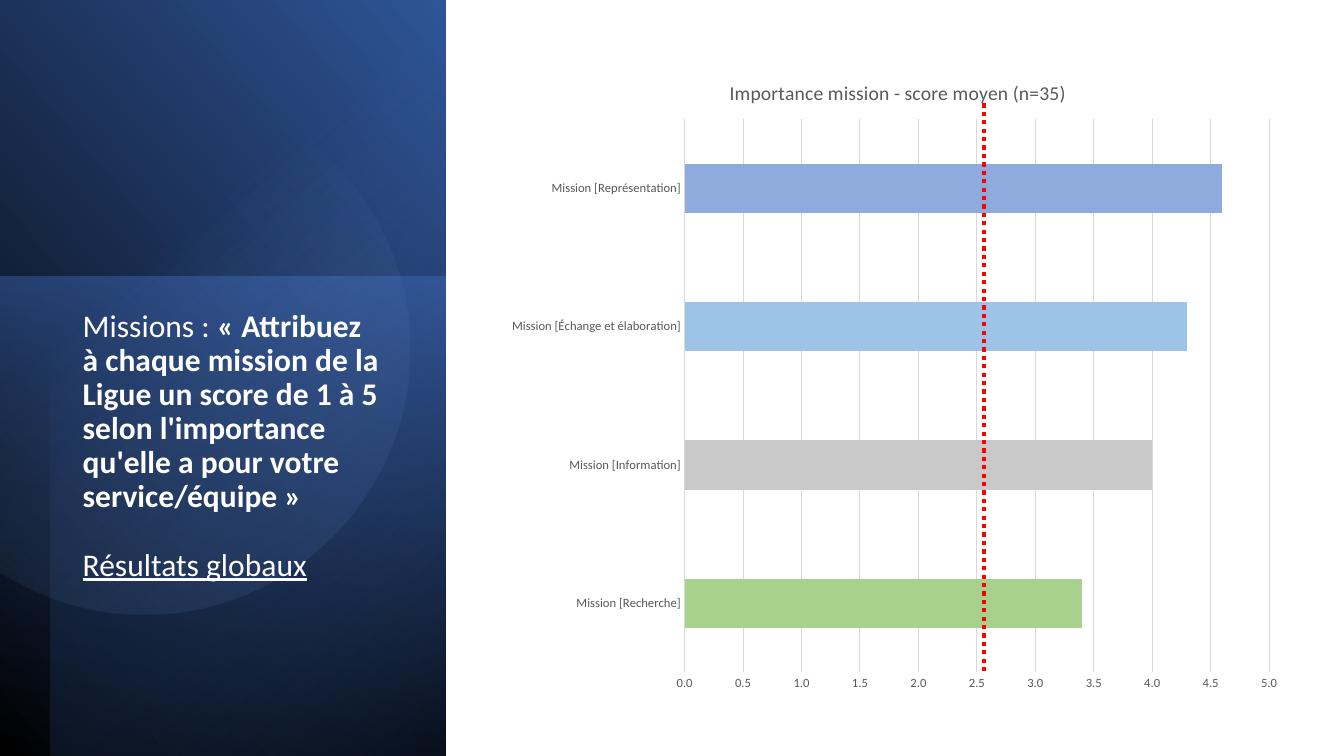
from math import cos, hypot, radians, sin

from lxml.etree import SubElement
from pptx import Presentation
from pptx.chart.data import CategoryChartData
from pptx.dml.color import RGBColor
from pptx.enum.chart import XL_CHART_TYPE, XL_TICK_MARK
from pptx.enum.dml import MSO_LINE
from pptx.enum.shapes import MSO_CONNECTOR, MSO_SHAPE
from pptx.enum.text import MSO_ANCHOR, MSO_AUTO_SIZE, PP_ALIGN
from pptx.oxml import parse_xml
from pptx.oxml.ns import nsdecls, qn
from pptx.util import Pt

FONT = "Calibri"
SLIDE_SIZE = (960, 540)

HEADING = [
    [("Missions : ", False, False),
     ("«\u00a0Attribuez à chaque mission de la Ligue un score de 1 à 5 selon "
      "l'importance qu'elle a pour votre service/équipe\u00a0»", True, False)],
    [("Résultats globaux", False, True)],
]
HEADING_BOX = (51.84, 218.16, 226.8, 241.92)

CHART_TITLE = "Importance mission - score moyen (n=35)"
MISSIONS = [
    ("Mission [Recherche]", 3.4, "A9D18E"),
    ("Mission [Information]", 4.0, "C9C9C9"),
    ("Mission [Échange et élaboration]", 4.3, "9DC3E6"),
    ("Mission [Représentation]", 4.6, "8FAADC"),
]
CHART_BOX = (354.24, 36.72, 568.8, 466.56)
PLOT_LAYOUT = {"x": 0.237, "y": 0.104, "w": 0.734, "h": 0.847}
TITLE_LAYOUT = {"x": 0.289, "y": 0.038}
MIDPOINT = (702.72, 479.52, 72.72)

PANELS = [
    ((-111.6, 111.6, 541.44, 318.24), 90, True, 310,
     [(0, "000000", 100), (100, "2F5597", 100)]),
    ((-12.24, 209.52, 342.72, 318.24), 270, False, 190,
     [(0, "4472C4", 50), (100, "203864", 0)]),
    ((-92.88, 128.88, 540, 282.24), 270, True, 220,
     [(0, "000000", 59), (69, "4472C4", 0)]),
]
DISC_CENTER, DISC_RADIUS, DISC_ROTATION = (102.96, 249.84), 189.36, 101.6
DISC_PIVOT = (130.32, 255.24)
DISC_ARC = 123
DISC_STOPS = [(39, "8FAADC", 0), (100, "2F5597", 26)]


def color(hex_code):
    return RGBColor.from_string(hex_code)


def points(*lengths):
    return [Pt(length) for length in lengths]


def finish_panel(panel, rotation, flipped, angle, stops):
    panel.shadow.inherit = False
    panel.rotation = rotation
    panel.line.fill.background()
    properties = panel._element.spPr
    if flipped:
        properties.find(qn("a:xfrm")).set("flipH", "1")
    stop_xml = "".join(
        f'<a:gs pos="{position * 1000}"><a:srgbClr val="{hex_code}">'
        f'<a:alpha val="{opacity * 1000}"/></a:srgbClr></a:gs>'
        for position, hex_code, opacity in stops)
    gradient = parse_xml(
        f'<a:gradFill {nsdecls("a")} rotWithShape="1"><a:gsLst>{stop_xml}</a:gsLst>'
        f'<a:lin ang="{angle * 60000}" scaled="0"/></a:gradFill>')
    properties.find(qn("a:ln")).addprevious(gradient)


def disc_point(degrees):
    dx = DISC_CENTER[0] + DISC_RADIUS * cos(radians(degrees)) - DISC_PIVOT[0]
    dy = DISC_CENTER[1] + DISC_RADIUS * sin(radians(degrees)) - DISC_PIVOT[1]
    turn = radians(-DISC_ROTATION)
    return (Pt(DISC_PIVOT[0] + dx * cos(turn) - dy * sin(turn)),
            Pt(DISC_PIVOT[1] + dx * sin(turn) + dy * cos(turn)))


def add_backdrop(slide):
    for box, rotation, flipped, angle, stops in PANELS:
        panel = slide.shapes.add_shape(MSO_SHAPE.RECTANGLE, *points(*box))
        finish_panel(panel, rotation, flipped, angle, stops)
    outline = [disc_point(degrees) for degrees in range(-DISC_ARC, DISC_ARC + 1, 2)]
    builder = slide.shapes.build_freeform(*outline[0])
    builder.add_line_segments(outline[1:], close=True)
    finish_panel(builder.convert_to_shape(), DISC_ROTATION, False, 310, DISC_STOPS)


def add_heading(slide):
    heading = slide.shapes.title
    heading.left, heading.top, heading.width, heading.height = points(*HEADING_BOX)
    frame = heading.text_frame
    frame.word_wrap = True
    frame.auto_size = MSO_AUTO_SIZE.NONE
    frame.vertical_anchor = MSO_ANCHOR.TOP
    for index, pieces in enumerate(HEADING):
        paragraph = frame.add_paragraph() if index else frame.paragraphs[0]
        paragraph.alignment = PP_ALIGN.LEFT
        paragraph.line_spacing = 0.9
        paragraph.space_before = Pt(24.5 * index)
        for text, bold, underline in pieces:
            run = paragraph.add_run()
            run.text = text
            run.font.name, run.font.size = FONT, Pt(22.5)
            run.font.bold, run.font.underline = bold, underline
            run.font.color.rgb = color("FFFFFF")
    slide.shapes._spTree.append(heading._element)


def style_font(font, size):
    font.name, font.size, font.bold = FONT, Pt(size), False
    font.color.rgb = color("595959")


def place(parent, layout, inner):
    for old in parent.findall(qn("c:layout")):
        parent.remove(old)
    holder = parse_xml(f'<c:layout {nsdecls("c")}/>')
    manual = SubElement(holder, qn("c:manualLayout"))
    if inner:
        SubElement(manual, qn("c:layoutTarget")).set("val", "inner")
    for key in ("x", "y"):
        SubElement(manual, qn(f"c:{key}Mode")).set("val", "edge")
    for key, share in layout.items():
        SubElement(manual, qn(f"c:{key}")).set("val", str(share))
    if inner:
        parent.insert(0, holder)
    else:
        parent.find(qn("c:tx")).addnext(holder)


def add_scores(slide):
    scores = CategoryChartData(number_format="0.0")
    scores.categories = [name for name, _, _ in MISSIONS]
    scores.add_series("Series 1", [score for _, score, _ in MISSIONS])
    chart = slide.shapes.add_chart(
        XL_CHART_TYPE.BAR_CLUSTERED, *points(*CHART_BOX), scores).chart
    style_font(chart.font, 10)
    chart.has_legend = False
    chart.has_title = True
    chart.chart_title.text_frame.text = CHART_TITLE
    style_font(chart.chart_title.text_frame.paragraphs[0].runs[0].font, 14)
    chart.chart_title.include_in_layout = False
    place(chart.chart_title._element, TITLE_LAYOUT, False)
    place(chart._chartSpace.chart.plotArea, PLOT_LAYOUT, True)

    plot = chart.plots[0]
    plot.gap_width = 182
    plot.vary_by_categories = False
    series = plot.series[0]
    series.format.fill.solid()
    series.format.fill.fore_color.rgb = color("4472C4")
    for index, (_, _, hex_code) in enumerate(MISSIONS):
        fill = series.points[index].format.fill
        fill.solid()
        fill.fore_color.rgb = color(hex_code)

    mission_axis, score_axis = chart.category_axis, chart.value_axis
    for axis in (mission_axis, score_axis):
        axis.major_tick_mark = axis.minor_tick_mark = XL_TICK_MARK.NONE
        style_font(axis.tick_labels.font, 9)
    score_axis.minimum_scale, score_axis.maximum_scale = 0, 5
    score_axis.major_unit = 0.5
    score_axis.tick_labels.number_format = "0.0"
    score_axis.tick_labels.number_format_is_linked = False
    score_axis.format.line.fill.background()
    for line in (mission_axis.format.line, score_axis.major_gridlines.format.line):
        line.color.rgb = color("D9D9D9")
        line.width = Pt(0.75)


def add_midpoint(slide):
    x, bottom, top = points(*MIDPOINT)
    midpoint = slide.shapes.add_connector(MSO_CONNECTOR.STRAIGHT, x, bottom, x, top)
    midpoint.line.color.rgb = color("FF0000")
    midpoint.line.width = Pt(3)
    midpoint.line.dash_style = MSO_LINE.ROUND_DOT
    SubElement(midpoint._element.spPr, qn("a:effectLst"))


def main():
    deck = Presentation()
    deck.slide_width, deck.slide_height = points(*SLIDE_SIZE)
    slide = deck.slides.add_slide(deck.slide_layouts[5])
    add_backdrop(slide)
    add_heading(slide)
    add_scores(slide)
    add_midpoint(slide)
    deck.save("out.pptx")


if __name__ == "__main__":
    main()
